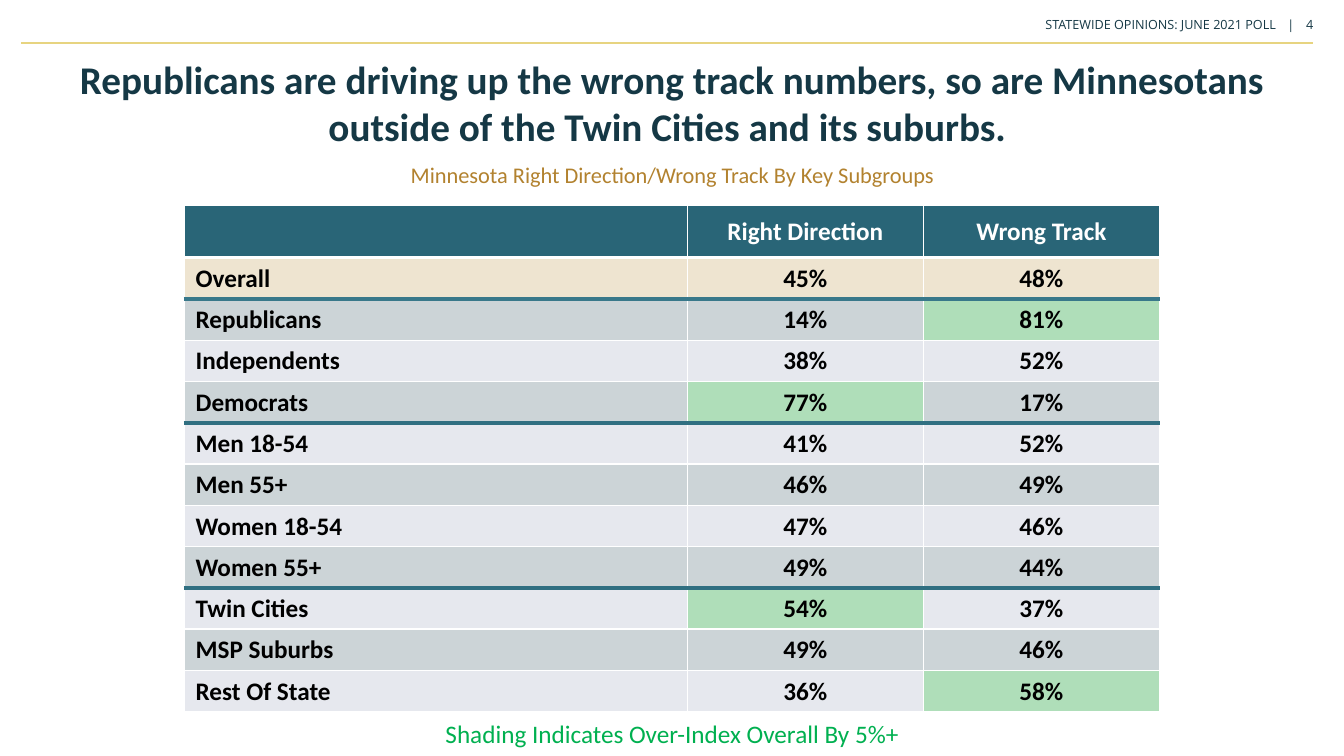
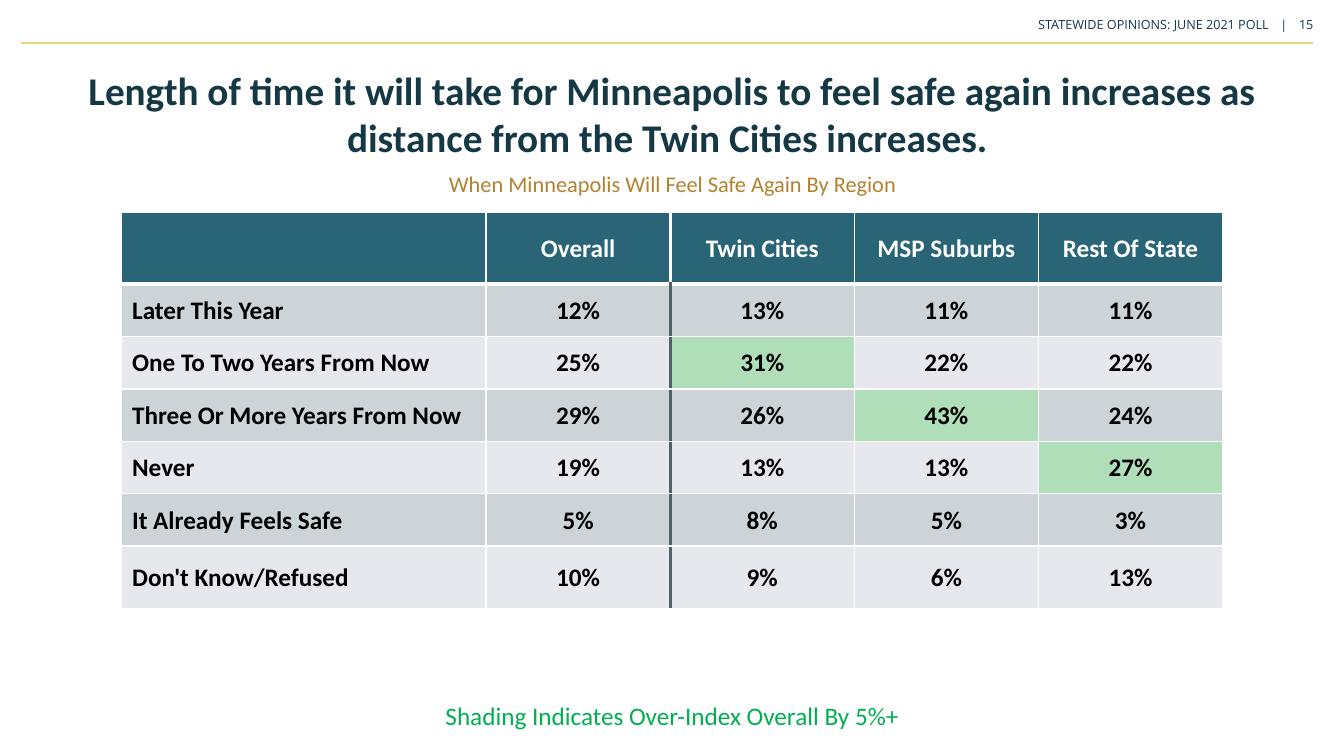
"""Build two poll slides, each with a table of results by subgroup."""
from lxml.etree import SubElement
from pptx import Presentation
from pptx.dml.color import RGBColor
from pptx.enum.shapes import MSO_CONNECTOR
from pptx.enum.text import MSO_ANCHOR, PP_ALIGN
from pptx.oxml.ns import qn
from pptx.util import Cm, Pt

COLORS = {
    "navy": "153845", "gold": "E7D480", "ochre": "B2822F", "note": "00B050",
    "header": "296577", "overall": "EEE4D0", "dark": "CCD4D7", "light": "E6E8EE",
    "over": "AFDEB9", "rule": "306F81", "first_rule": "38788A", "divider": "4D6166",
    "white": "FFFFFF", "black": "000000",
}
THIN = ("white", 1)
OVER_INDEX = 5


def rgb(name):
    return RGBColor.from_string(COLORS[name])


def write(tf, text, size=18, color="black", bold=False, font="Calibri",
          align=PP_ALIGN.CENTER, tabs=()):
    p = tf.paragraphs[0]
    p.alignment = align
    if tabs:
        tab_list = SubElement(p._p.get_or_add_pPr(), qn("a:tabLst"))
        for pos in tabs:
            SubElement(tab_list, qn("a:tab"), pos=str(Cm(pos)), algn="r")
    r = p.add_run()
    r.text = text
    r.font.size = Pt(size)
    r.font.bold = bold
    r.font.name = font
    r.font.color.rgb = rgb(color)


def add_text(s, box, text, anchor=MSO_ANCHOR.TOP, **fmt):
    tf = s.shapes.add_textbox(*map(Cm, box)).text_frame
    tf.word_wrap = True
    tf.vertical_anchor = anchor
    write(tf, text, **fmt)
    return tf


def add_header(s, number):
    ln = s.shapes.add_connector(MSO_CONNECTOR.STRAIGHT, Cm(0.53), Cm(1.09), Cm(33.1), Cm(1.09))
    ln.line.color.rgb = rgb("gold")
    ln.line.width = Pt(1.25)
    SubElement(ln._element.spPr, qn("a:effectLst"))
    shift = 0.18 * (len(str(number)) - 1)
    tf = add_text(s, (20.3, 0.3, 13.06, 0.79),
                  f"\tSTATEWIDE OPINIONS: JUNE 2021 POLL\t|\t{number}",
                  size=9, color="navy", font="Open Sans", align=PP_ALIGN.LEFT,
                  tabs=(11.6 - shift, 12.07 - shift, 12.55))
    tf.margin_right = 0


def add_slide(prs, number, title, title_top, subtitle, subtitle_top, note_top):
    s = prs.slides.add_slide(prs.slide_layouts[6])
    add_header(s, number)
    add_text(s, (1.4, title_top, 31.05, 2.64), title, anchor=MSO_ANCHOR.MIDDLE,
             size=28, color="navy", bold=True)
    add_text(s, (4.5, subtitle_top, 24.9, 1.1), subtitle, size=16, color="ochre")
    add_text(s, (10.34, note_top, 13.2, 1.02),
             "Shading Indicates Over-Index Overall By 5%+", color="note")
    return s


def set_borders(cell, left, right, top, bottom):
    tc_pr = cell._tc.get_or_add_tcPr()
    for side, (color, width) in zip("LRTB", (left, right, top, bottom)):
        ln = SubElement(tc_pr, qn(f"a:ln{side}"), w=str(Pt(width)))
        fill = SubElement(ln, qn("a:solidFill"))
        SubElement(fill, qn("a:srgbClr"), val=COLORS[color])


def fill_cell(cell, color):
    cell.fill.solid()
    cell.fill.fore_color.rgb = rgb(color)


def style_cell(cell, text, color, is_header, is_label):
    cell.vertical_anchor = MSO_ANCHOR.MIDDLE
    margin = Cm(0.13 if is_header else 0.03)
    cell.margin_left = Cm(0.28) if is_label else margin
    cell.margin_top = cell.margin_right = margin
    cell.margin_bottom = margin if is_header else 0
    fill_cell(cell, color)
    if text:
        write(cell.text_frame, text, bold=True,
              color="white" if is_header else "black",
              align=PP_ALIGN.LEFT if is_label else PP_ALIGN.CENTER)


def add_table(s, left, top, widths, heights, header, rows, pick_fill,
              row_rules=None, col_rules=None):
    row_rules = {0: ("white", 3), **(row_rules or {})}
    col_rules = col_rules or {}
    table = s.shapes.add_table(len(heights), len(widths), Cm(left), Cm(top),
                               Cm(sum(widths)), Cm(sum(heights))).table
    table.first_row = table.horz_banding = False
    for col, width in zip(table.columns, widths):
        col.width = Cm(width)
    for row, height in zip(table.rows, heights):
        row.height = Cm(height)
    for i, values in enumerate([header, *rows]):
        for j, value in enumerate(values):
            cell = table.cell(i, j)
            sides = [col_rules.get(j - 1, THIN), col_rules.get(j, THIN)]
            if i == 0:
                sides = [("white", width) for _, width in sides]
            set_borders(cell, *sides, row_rules.get(i - 1, THIN), row_rules.get(i, THIN))
            text = value if isinstance(value, str) else f"{value}%"
            color = pick_fill(i, j, value) if i else "header"
            style_cell(cell, text, color, i == 0, i > 0 and j == 0)


def add_track_slide(prs):
    s = add_slide(prs, 4, "Republicans are driving up the wrong track numbers, so are "
                  "Minnesotans outside of the Twin Cities and its suburbs. ", 1.27,
                  "Minnesota Right Direction/Wrong Track By Key Subgroups", 3.94, 17.98)
    rows = [
        ("Overall", 45, 48), ("Republicans", 14, 81), ("Independents", 38, 52),
        ("Democrats", 77, 17), ("Men 18-54", 41, 52), ("Men 55+", 46, 49),
        ("Women 18-54", 47, 46), ("Women 55+", 49, 44), ("Twin Cities", 54, 37),
        ("MSP Suburbs", 49, 46), ("Rest Of State", 36, 58),
    ]

    def pick_fill(i, j, value):
        if i == 1:
            return "overall"
        if j and value - rows[0][j] >= OVER_INDEX:
            return "over"
        return "light" if i % 2 else "dark"

    add_table(s, 4.65, 5.17, [12.67, 5.95, 5.95], [1.32] + [1.04] * len(rows),
              ("", "Right Direction", "Wrong Track"), rows, pick_fill,
              row_rules={1: ("first_rule", 3), 4: ("rule", 3), 8: ("rule", 3)})


def add_safety_slide(prs):
    s = add_slide(prs, 15, "Length of time it will take for Minneapolis to feel safe again "
                  "increases as distance from the Twin Cities increases. ", 1.54,
                  "When Minneapolis Will Feel Safe Again By Region", 4.17, 17.53)
    rows = [
        ("Later This Year", 12, 13, 11, 11),
        ("One To Two Years From Now", 25, 31, 22, 22),
        ("Three Or More Years From Now", 29, 26, 43, 24),
        ("Never", 19, 13, 13, 27),
        ("It Already Feels Safe", 5, 8, 5, 3),
        ("Don't Know/Refused", 10, 9, 6, 13),
    ]

    def pick_fill(i, j, value):
        if j and value - rows[i - 1][1] >= OVER_INDEX:
            return "over"
        return "dark" if i % 2 else "light"

    add_table(s, 3.05, 5.36, [9.2] + [4.64] * 4, [1.8] + [1.32] * 5 + [1.57],
              ("", "Overall", "Twin Cities", "MSP Suburbs", "Rest Of State"), rows,
              pick_fill, col_rules={1: ("divider", 2.25)})


def main():
    prs = Presentation()
    prs.slide_width, prs.slide_height = Cm(33.87), Cm(19.05)
    add_track_slide(prs)
    add_safety_slide(prs)
    prs.save("out.pptx")


if __name__ == "__main__":
    main()
